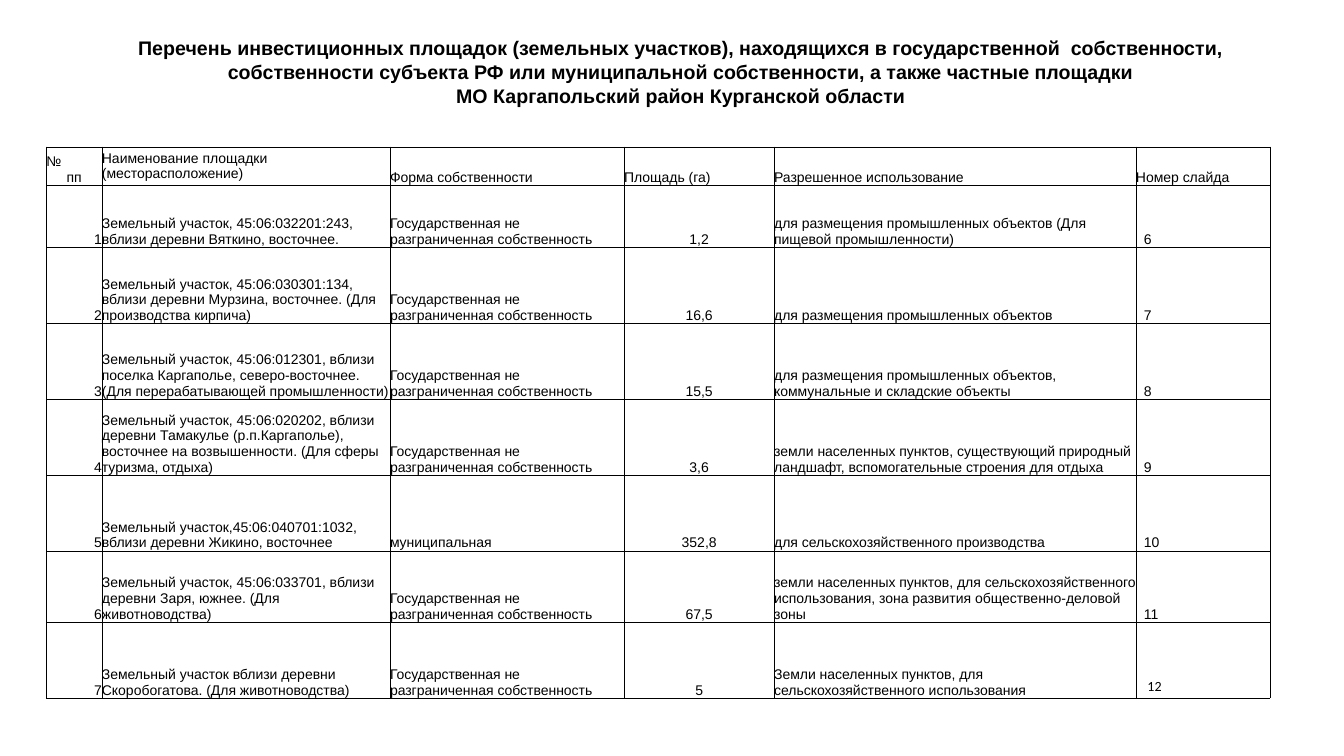
from pptx import Presentation
from pptx.dml.color import RGBColor
from pptx.enum.text import MSO_ANCHOR, MSO_AUTO_SIZE, PP_ALIGN
from pptx.oxml import parse_xml
from pptx.oxml.ns import nsdecls
from pptx.util import Cm, Pt

# Content
TITLE = (
    "Перечень инвестиционных площадок (земельных участков), находящихся в государственной  собственности, "
    "собственности субъекта РФ или муниципальной собственности, а также частные площадки",
    "МО Каргапольский район Курганской области",
)
HEADER = ("№\nпп", "Наименование площадки (месторасположение)", "Форма собственности",
          "Площадь (га)", "Разрешенное использование", "Номер слайда")
STATE = "Государственная не разграниченная собственность"
SITES = [
    ("Земельный участок, 45:06:032201:243, вблизи деревни Вяткино, восточнее.", STATE, "1,2",
     "для размещения промышленных объектов (Для пищевой промышленности)"),
    ("Земельный участок, 45:06:030301:134, вблизи деревни Мурзина, восточнее. (Для производства кирпича)",
     STATE, "16,6", "для размещения промышленных объектов"),
    ("Земельный участок, 45:06:012301, вблизи поселка Каргаполье, северо-восточнее. "
     "(Для перерабатывающей промышленности)", STATE, "15,5",
     "для размещения промышленных объектов, коммунальные и складские объекты"),
    ("Земельный участок, 45:06:020202, вблизи деревни Тамакулье (р.п.Каргаполье), "
     "восточнее на возвышенности. (Для сферы туризма, отдыха)", STATE, "3,6",
     "земли населенных пунктов, существующий природный ландшафт, вспомогательные строения для отдыха"),
    ("Земельный участок,45:06:040701:1032, вблизи деревни Жикино, восточнее", "муниципальная", "352,8",
     "для сельскохозяйственного производства"),
    ("Земельный участок, 45:06:033701, вблизи деревни Заря, южнее. (Для животноводства)", STATE, "67,5",
     "земли населенных пунктов, для сельскохозяйственного использования, "
     "зона развития общественно-деловой зоны"),
    ("Земельный участок вблизи деревни Скоробогатова. (Для животноводства)", STATE, "5",
     "Земли населенных пунктов, для сельскохозяйственного использования"),
]
FIRST_SLIDE = 6  # slide number of the first site

# Layout, cm
COLS = (1.4, 7.26, 5.9, 3.78, 9.12, 3.38)
ROWS = (0.97, 1.57, 1.91, 1.91, 1.91, 1.91, 1.8, 1.91)
ALIGNS = (PP_ALIGN.RIGHT, PP_ALIGN.LEFT, PP_ALIGN.LEFT, PP_ALIGN.CENTER, PP_ALIGN.LEFT, PP_ALIGN.LEFT)
BLACK = "000000"


def color(value):
    return RGBColor.from_string(value)


def apply(obj, **values):
    for name, value in values.items():
        setattr(obj, name, value)


def format_paragraph(p, align, size, bold=False, font="Arial"):
    p.alignment = align
    apply(p.font, name=font, size=Pt(size), bold=bold)
    p.font.color.rgb = color(BLACK)


def add_borders(cell):
    tcPr = cell._tc.get_or_add_tcPr()
    for i, side in enumerate(("lnL", "lnR", "lnT", "lnB")):
        tcPr.insert(i, parse_xml(
            f'<a:{side} {nsdecls("a")} w="{Pt(0.5)}"><a:solidFill>'
            f'<a:srgbClr val="{BLACK}"/></a:solidFill></a:{side}>'))


prs = Presentation()
apply(prs, slide_width=Cm(33.87), slide_height=Cm(19.05))
s = prs.slides.add_slide(prs.slide_layouts[5])

# Title
sp = s.shapes.title
apply(sp, left=Cm(2.87), top=Cm(0.79), width=Cm(28.58), height=Cm(2.82))
tf = sp.text_frame
tf.text = "\n".join(TITLE)
apply(tf, word_wrap=True, auto_size=MSO_AUTO_SIZE.NONE, vertical_anchor=MSO_ANCHOR.TOP)
for p in tf.paragraphs:
    format_paragraph(p, PP_ALIGN.CENTER, 14, bold=True)

# Table of sites
rows = [HEADER] + [(str(i + 1), *site, str(FIRST_SLIDE + i)) for i, site in enumerate(SITES)]
table = s.shapes.add_table(len(ROWS), len(COLS), Cm(1.17), Cm(3.7), Cm(sum(COLS)), Cm(sum(ROWS))).table
apply(table, first_row=False, horz_banding=False)
for column, width in zip(table.columns, COLS):
    column.width = Cm(width)
for row, height in zip(table.rows, ROWS):
    row.height = Cm(height)

for r, texts in enumerate(rows):
    for c, text in enumerate(texts):
        cell = table.cell(r, c)
        cell.text = text
        apply(cell, margin_left=0, margin_right=0, margin_top=0, margin_bottom=0,
              vertical_anchor=MSO_ANCHOR.BOTTOM)
        cell.fill.background()
        add_borders(cell)
        for p in cell.text_frame.paragraphs:
            format_paragraph(p, ALIGNS[c] if r else PP_ALIGN.LEFT, 10)
        if r and c == len(COLS) - 1:
            cell.margin_left = Cm(0.2)

# Exceptions: header cells and the last slide number
table.cell(0, 0).text_frame.paragraphs[1].alignment = PP_ALIGN.CENTER
table.cell(0, 1).vertical_anchor = MSO_ANCHOR.MIDDLE
last = table.cell(len(ROWS) - 1, len(COLS) - 1)
apply(last, margin_left=Cm(0.29), margin_bottom=Cm(0.07))
last.text_frame.paragraphs[0].font.name = "Calibri"

prs.save("out.pptx")
